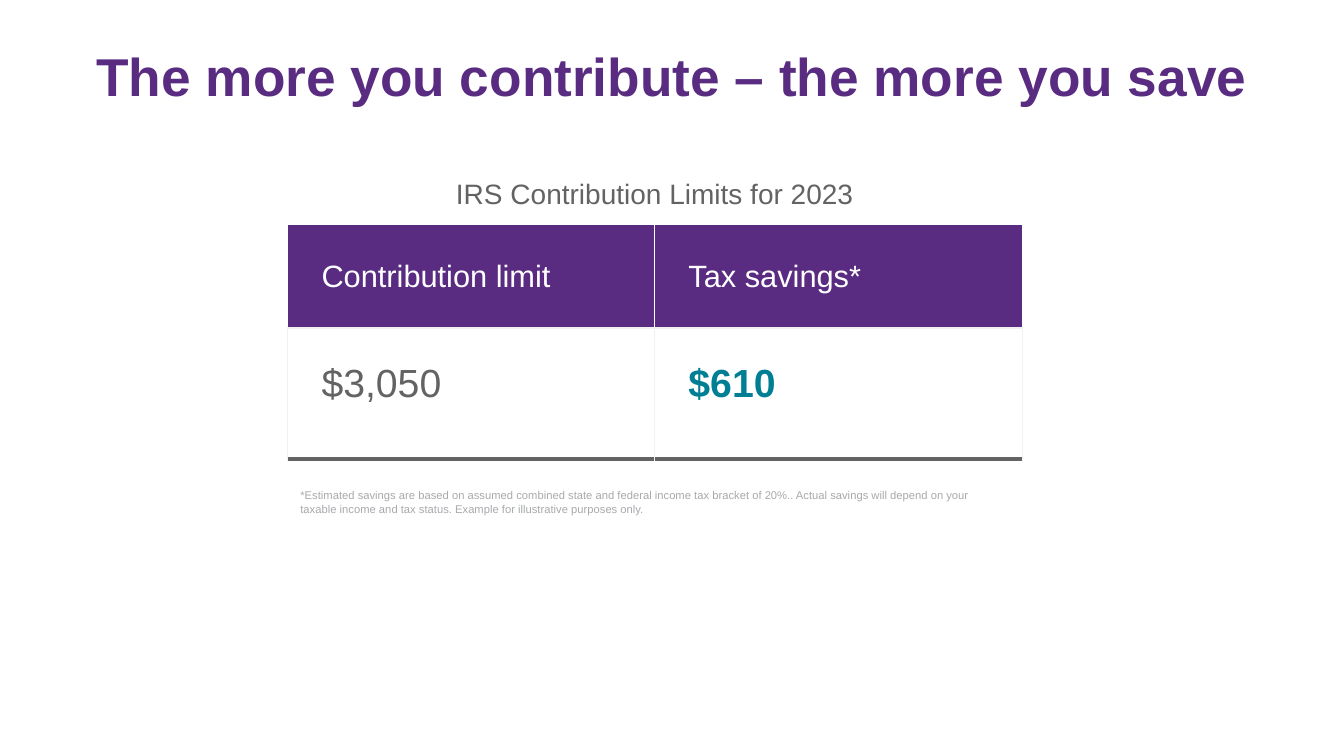
from lxml.etree import SubElement
from pptx import Presentation
from pptx.dml.color import RGBColor
from pptx.enum.text import MSO_ANCHOR, PP_ALIGN
from pptx.oxml.ns import qn
from pptx.util import Pt

COLORS = {
    "purple": "592C82",
    "teal": "007F94",
    "text": "626362",
    "note": "A7A9AC",
    "rule": "F1F1F2",
    "white": "FFFFFF",
}
LEFT, WIDTH = 205.2, 525
COLUMN_WIDTHS = (262.1, 262.9)
ROW_HEIGHTS = (73.2, 93.6)
CELL_INSET, BOX_INSET = 24.5, 9.36


def style_text(paragraph, size, color, bold=False):
    for run in paragraph.runs:
        run.font.name = "Arial"
        run.font.size = Pt(size)
        run.font.bold = bold
        run.font.color.rgb = RGBColor.from_string(COLORS[color])


def set_insets(holder, inset):
    holder.margin_left = holder.margin_right = Pt(inset)
    holder.margin_top = holder.margin_bottom = Pt(inset)


def add_text(slide, place, text, size, color, bold=False, align=PP_ALIGN.CENTER):
    box = slide.shapes.add_textbox(*(Pt(length) for length in place))
    frame = box.text_frame
    frame.word_wrap = True
    set_insets(frame, BOX_INSET)
    frame.text = text
    paragraph = frame.paragraphs[0]
    paragraph.alignment = align
    style_text(paragraph, size, color, bold)
    return paragraph


def add_borders(cell, borders):
    properties = cell._tc.get_or_add_tcPr()
    for index, (side, (color, width)) in enumerate(borders.items()):
        line = SubElement(properties, qn(f"a:ln{side}"), w=str(Pt(width)))
        fill = SubElement(line, qn("a:solidFill"))
        SubElement(fill, qn("a:srgbClr"), val=COLORS[color])
        # Border lines come before the cell fill
        properties.insert(index, line)


def fill_cell(cell, text, size, color, background, borders, bold=False,
              anchor=MSO_ANCHOR.TOP):
    cell.text = text
    cell.vertical_anchor = anchor
    set_insets(cell, CELL_INSET)
    cell.fill.solid()
    cell.fill.fore_color.rgb = RGBColor.from_string(COLORS[background])
    style_text(cell.text_frame.paragraphs[0], size, color, bold)
    add_borders(cell, borders)


def add_limits_table(slide):
    limits = slide.shapes.add_table(
        2, 2, Pt(LEFT), Pt(160.6), Pt(WIDTH), Pt(sum(ROW_HEIGHTS))).table
    limits.horz_banding = False
    for column, width in zip(limits.columns, COLUMN_WIDTHS):
        column.width = Pt(width)
    for row, height in zip(limits.rows, ROW_HEIGHTS):
        row.height = Pt(height)

    # Header row
    header_borders = {side: ("white", 1) for side in "LRT"} | {"B": ("rule", 1)}
    for index, heading in enumerate(("Contribution limit", "Tax savings*")):
        fill_cell(limits.cell(0, index), heading, 22, "white", "purple",
                  header_borders, anchor=MSO_ANCHOR.MIDDLE)

    # Amounts
    amount_borders = {side: ("rule", 1) for side in "LRT"} | {"B": ("text", 3)}
    amounts = (("$3,050", "text", False), ("$610", "teal", True))
    for index, (amount, color, bold) in enumerate(amounts):
        fill_cell(limits.cell(1, index), amount, 28, color, "white",
                  amount_borders, bold)


def main():
    deck = Presentation()
    deck.slide_width, deck.slide_height = Pt(960), Pt(540)
    slide = deck.slides.add_slide(deck.slide_layouts[6])

    add_limits_table(slide)

    # Title and table caption
    add_text(slide, (0, 21.6, 960, 65.5),
             "The more you contribute – the more you save", 38, "purple", bold=True)
    add_text(slide, (LEFT, 116.6, WIDTH, 43.9),
             "IRS Contribution Limits for 2023", 20, "text")

    # Footnote
    footnote = add_text(
        slide, (LEFT, 339.8, WIDTH, 38.9),
        "*Estimated savings are based on assumed combined state and federal income "
        "tax bracket of 20%.. Actual savings will depend on your taxable income and "
        "tax status. Example for illustrative purposes only.",
        8, "note", align=PP_ALIGN.LEFT)
    footnote.space_after = Pt(1.3)

    deck.save("out.pptx")


if __name__ == "__main__":
    main()
